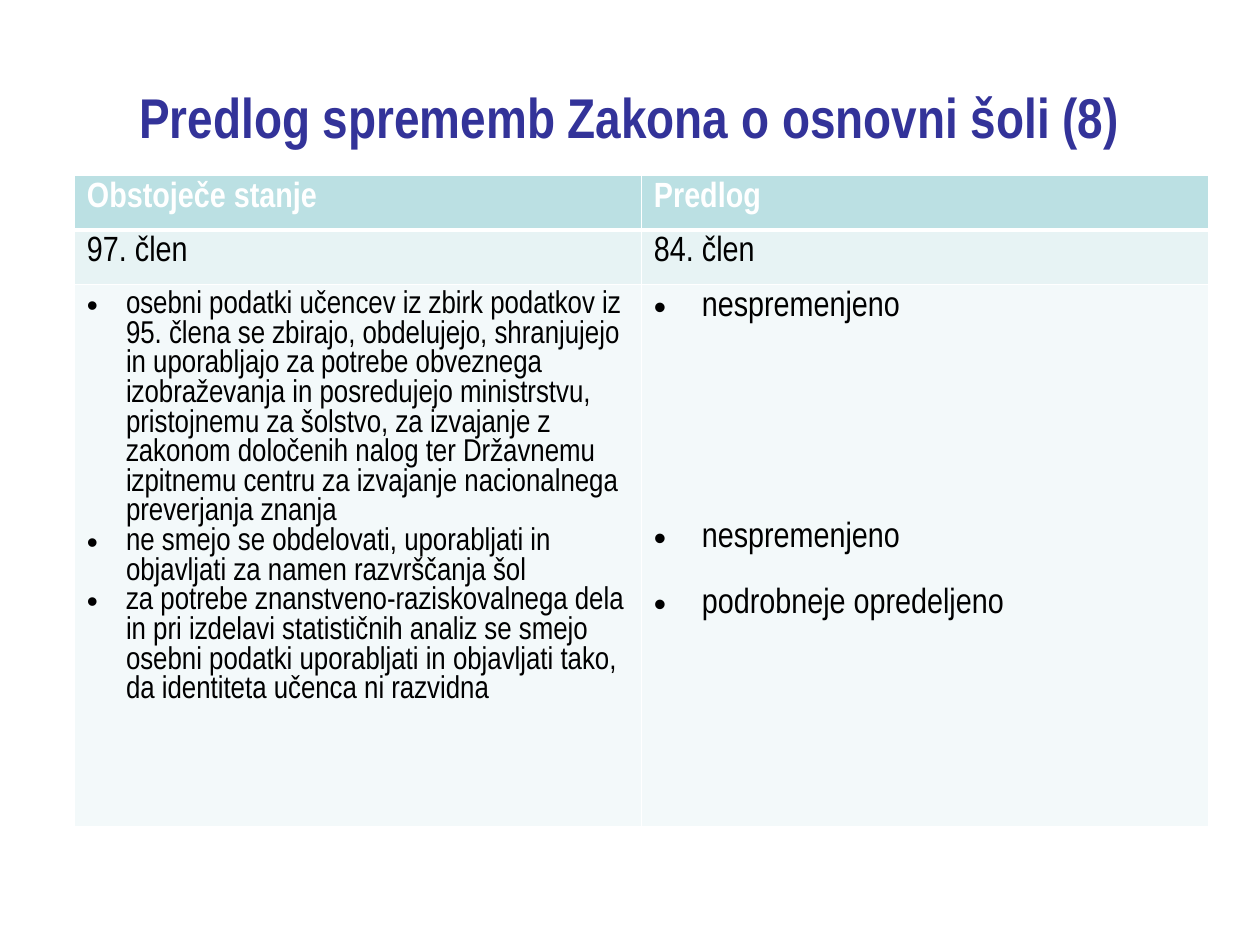
from lxml import etree
from pptx import Presentation
from pptx.dml.color import RGBColor
from pptx.enum.text import MSO_ANCHOR, PP_ALIGN
from pptx.oxml.ns import qn
from pptx.util import Inches, Pt

CENTER = PP_ALIGN.CENTER
MIDDLE = MSO_ANCHOR.MIDDLE
FONT = "Arial Narrow"
COLORS = {
    "title": "333399",
    "header": "BBE0E3",
    "article": "E7F3F4",
    "content": "F3F9FA",
    "white": "FFFFFF",
    "black": "000000",
}
ROW_HEIGHTS = [0.41, 0.41, 3.64]
LINE = 18.9  # height of one 20 pt line, in points

HEADINGS = ["Obstoječe stanje", "Predlog"]
ARTICLES = ["97. člen", "84. člen"]
CURRENT = [
    "osebni podatki učencev iz zbirk podatkov iz 95. člena se zbirajo, "
    "obdelujejo, shranjujejo in uporabljajo za potrebe obveznega "
    "izobraževanja in posredujejo ministrstvu, pristojnemu za šolstvo, "
    "za izvajanje z zakonom določenih nalog ter Državnemu izpitnemu centru "
    "za izvajanje nacionalnega preverjanja znanja",
    "ne smejo se obdelovati, uporabljati in objavljati za namen "
    "razvrščanja šol",
    "za potrebe znanstveno-raziskovalnega dela in pri izdelavi statističnih "
    "analiz se smejo osebni podatki uporabljati in objavljati tako, "
    "da identiteta učenca ni razvidna",
]
PROPOSED = ["nespremenjeno", "nespremenjeno", "podrobneje opredeljeno"]


def rgb(name):
    return RGBColor.from_string(COLORS[name])


def style(paragraph, size, color, bold=False):
    for run in paragraph.runs:
        run.font.name = FONT
        run.font.size = Pt(size)
        run.font.bold = bold
        run.font.color.rgb = rgb(color)


def add_bullet(paragraph, indent):
    properties = paragraph._p.get_or_add_pPr()
    properties.set("marL", str(Inches(indent)))
    properties.set("indent", str(-Inches(indent)))
    etree.SubElement(properties, qn("a:buFont")).set("typeface", "Arial")
    etree.SubElement(properties, qn("a:buChar")).set("char", "•")


def set_borders(cell, top=1, bottom=1):
    properties = cell._tc.get_or_add_tcPr()
    for side, width in (("L", 1), ("R", 1), ("T", top), ("B", bottom)):
        line = etree.SubElement(properties, qn(f"a:ln{side}"), w=str(Pt(width)))
        fill = etree.SubElement(line, qn("a:solidFill"))
        etree.SubElement(fill, qn("a:srgbClr"), val=COLORS["white"])


def fill_cell(cell, fill):
    cell.fill.solid()
    cell.fill.fore_color.rgb = rgb(fill)


def add_title(slide, text):
    title = slide.shapes.add_textbox(Inches(0.5), Inches(0.3), Inches(9), Inches(1.25))
    frame = title.text_frame
    frame.word_wrap = True
    frame.vertical_anchor = MIDDLE
    frame.text = text
    frame.paragraphs[0].alignment = CENTER
    style(frame.paragraphs[0], 32, "title", bold=True)


def write_bullets(cell, items, size, indent, blank_lines):
    """Write a bulleted list; blank_lines gives the gap before each item."""
    frame = cell.text_frame
    frame.text = "\n".join(items)
    for paragraph, gap in zip(frame.paragraphs, blank_lines):
        if gap:
            paragraph.space_before = Pt(gap * LINE)
        add_bullet(paragraph, indent)
        style(paragraph, size, "black")


def add_comparison(slide):
    table = slide.shapes.add_table(
        3, 2, Inches(0.59), Inches(1.39), Inches(9), Inches(sum(ROW_HEIGHTS))
    ).table
    for row, height in zip(table.rows, ROW_HEIGHTS):
        row.height = Inches(height)

    # Borders and row fills
    for index, fill in enumerate(("header", "article", "content")):
        for cell in table.rows[index].cells:
            set_borders(cell, top=3 if index == 1 else 1, bottom=3 if index == 0 else 1)
            fill_cell(cell, fill)

    # Headings and article numbers
    for column, (heading, article) in enumerate(zip(HEADINGS, ARTICLES)):
        for row, text, color in ((0, heading, "white"), (1, article, "black")):
            frame = table.cell(row, column).text_frame
            frame.text = text
            style(frame.paragraphs[0], 20, color, bold=row == 0)

    # Provisions, each proposal level with its current provision
    write_bullets(table.cell(2, 0), CURRENT, 18, 0.31, [0, 0, 0])
    write_bullets(table.cell(2, 1), PROPOSED, 20, 0.38, [0, 6, 1])


def main():
    prs = Presentation()
    prs.slide_width, prs.slide_height = Inches(10), Inches(7.5)
    slide = prs.slides.add_slide(prs.slide_layouts[6])
    add_title(slide, "Predlog sprememb Zakona o osnovni šoli (8)")
    add_comparison(slide)
    prs.save("out.pptx")


if __name__ == "__main__":
    main()
